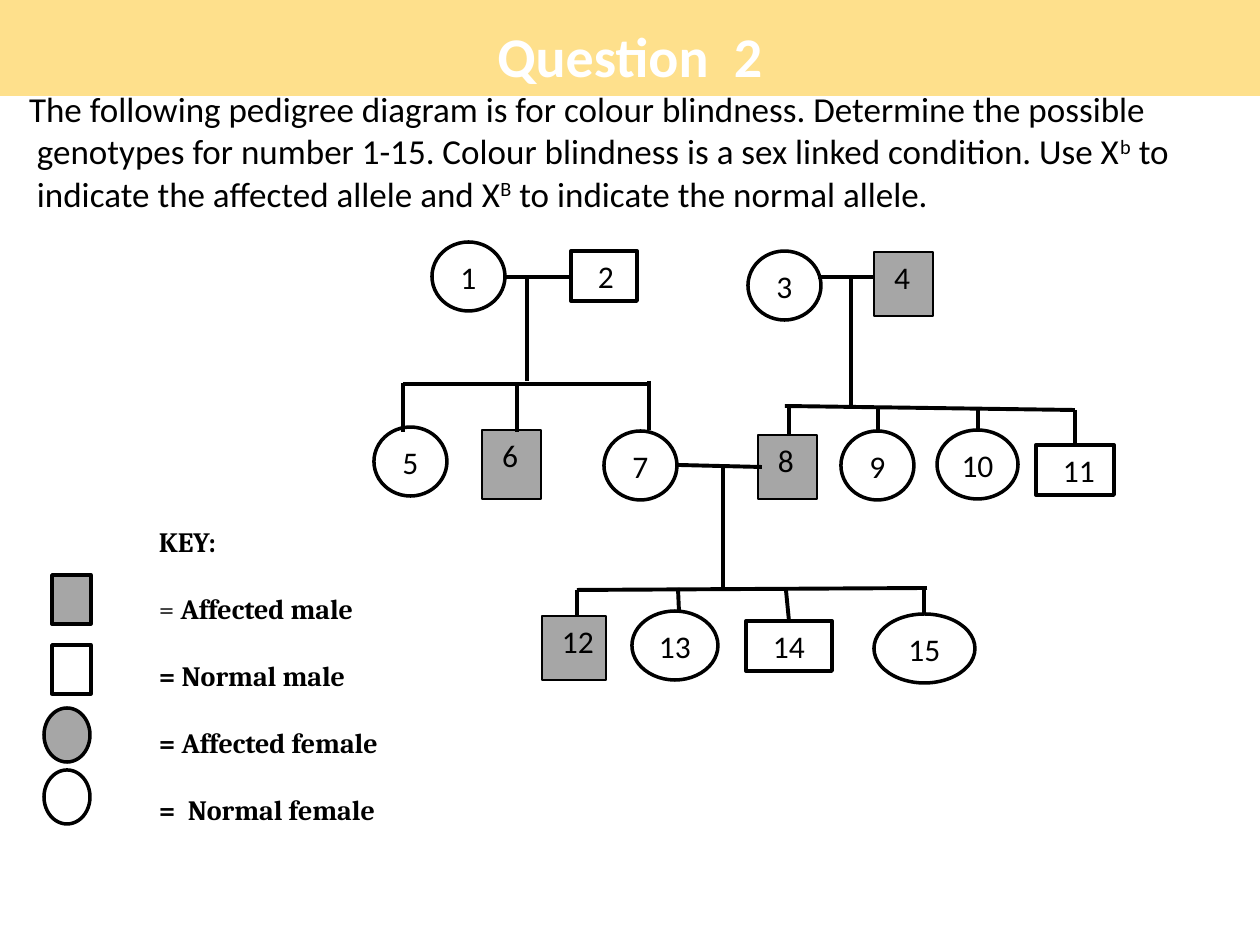
from typing import NamedTuple

from lxml import etree
from pptx import Presentation
from pptx import util as u
from pptx.dml.color import RGBColor
from pptx.enum import shapes, text
from pptx.oxml.ns import qn

PX = 914400 / 126
BLACK = RGBColor(0x00, 0x00, 0x00)
WHITE = RGBColor(0xFF, 0xFF, 0xFF)
GREY = RGBColor(0xA6, 0xA6, 0xA6)
YELLOW = RGBColor(0xFE, 0xE0, 0x8C)

RECT = shapes.MSO_SHAPE.RECTANGLE
OVAL = shapes.MSO_SHAPE.OVAL
NODE = shapes.MSO_SHAPE.FLOWCHART_CONNECTOR
MIDDLE, TOP = text.MSO_ANCHOR.MIDDLE, text.MSO_ANCHOR.TOP
LEFT, CENTER = text.PP_ALIGN.LEFT, text.PP_ALIGN.CENTER

TITLE = dict(name="Calibri", size=u.Pt(32), bold=True)
BODY = dict(name="Calibri", size=u.Pt(20))
LABEL = dict(name="Calibri", size=u.Pt(18))
KEY = dict(name="Cambria", size=u.Pt(16))


class Box(NamedTuple):
    x: int
    y: int
    w: int
    h: int


class Style(NamedTuple):
    kind: int
    fill: RGBColor | None
    line: float
    inset: int = 0


class Person(NamedTuple):
    label: str
    style: Style
    box: Box


class Line(NamedTuple):
    x1: int
    y1: int
    x2: int
    y2: int


FEMALE = Style(OVAL, None, 2)
MALE = Style(RECT, None, 2.25, 27)
AFFECTED_MALE = Style(RECT, GREY, 0.75, 20)

PEOPLE = [
    Person("1", FEMALE, Box(432, 242, 73, 69)),
    Person("2", MALE, Box(571, 251, 66, 50)),
    Person("3", FEMALE, Box(748, 251, 73, 69)),
    Person("4", AFFECTED_MALE, Box(874, 252, 59, 64)),
    Person("5", FEMALE, Box(374, 427, 73, 69)),
    Person("6", AFFECTED_MALE, Box(482, 430, 59, 69)),
    Person("7", FEMALE, Box(604, 431, 73, 69)),
    Person("8", AFFECTED_MALE, Box(758, 435, 59, 64)),
    Person("9", FEMALE, Box(841, 431, 73, 69)),
    Person("10", FEMALE, Box(937, 430, 81, 69)),
    Person("11", MALE, Box(1036, 445, 78, 50)),
    Person("12", AFFECTED_MALE, Box(542, 616, 64, 64)),
    Person("13", FEMALE, Box(632, 611, 86, 69)),
    Person("14", MALE, Box(746, 621, 86, 50)),
    Person("15", FEMALE, Box(874, 614, 101, 69)),
]

LINES = [
    Line(505, 277, 571, 277), Line(527, 277, 527, 381),
    Line(403, 384, 649, 384), Line(403, 383, 403, 432),
    Line(517, 383, 517, 432), Line(649, 381, 649, 430),
    Line(818, 277, 874, 277), Line(851, 277, 851, 406),
    Line(785, 406, 1075, 410), Line(789, 407, 789, 435),
    Line(878, 406, 878, 431), Line(978, 410, 978, 430),
    Line(1075, 410, 1075, 445),
    Line(678, 465, 762, 467), Line(723, 467, 723, 590),
    Line(577, 590, 927, 588), Line(577, 590, 577, 616),
    Line(678, 588, 679, 611), Line(786, 590, 789, 621),
    Line(924, 588, 924, 614),
]

KEY_SYMBOLS = [
    (Style(RECT, GREY, 2), Box(52, 575, 39, 49)),
    (Style(RECT, WHITE, 2), Box(52, 645, 39, 49)),
    (Style(NODE, GREY, 2), Box(44, 708, 46, 54)),
    (Style(NODE, WHITE, 2), Box(44, 770, 46, 54)),
]

KEY_ROWS = [
    [("KEY:", True)],
    [("= ", False), ("Affected male", True)],
    [("= Normal male", True)],
    [("= Affected female", True)],
    [("=  Normal female", True)],
]

QUESTION = [
    [("The following pedigree diagram is for colour blindness. Determine the possible", 0)],
    [(" genotypes for number 1-15. Colour blindness is a sex linked condition. Use X", 0),
     ("b", 30), (" to", 0)],
    [(" indicate the affected allele and X", 0), ("B", 30),
     (" to indicate the normal allele.", 0)],
]


def emu(px: int) -> int:
    return round(px * PX)


def set_all(obj, values: dict) -> None:
    for name, value in values.items():
        setattr(obj, name, value)


def add_run(p, words: str, fmt: dict, color: RGBColor = BLACK):
    r = p.add_run()
    r.text = words
    set_all(r.font, fmt)
    r.font.color.rgb = color
    return r


def add_paragraph(tf, index: int, align=LEFT):
    p = tf.add_paragraph() if index else tf.paragraphs[0]
    p.alignment = align
    return p


def set_frame(tf, anchor, left: int = 13, top: int = 6, right: int = 13) -> None:
    set_all(tf, dict(word_wrap=True, vertical_anchor=anchor,
                     margin_left=emu(left), margin_top=emu(top),
                     margin_right=emu(right), margin_bottom=emu(6)))


def draw_shape(s, style: Style, box: Box):
    sp = s.shapes.add_shape(style.kind, *map(emu, box))
    sp.shadow.inherit = False
    if style.fill is None:
        sp.fill.background()
    else:
        sp.fill.solid()
        sp.fill.fore_color.rgb = style.fill
    if style.line:
        sp.line.color.rgb = BLACK
        sp.line.width = u.Pt(style.line)
    else:
        sp.line.fill.background()
    return sp


def draw_person(s, person: Person) -> None:
    tf = draw_shape(s, person.style, person.box).text_frame
    is_oval = person.style.kind == OVAL
    set_frame(tf, MIDDLE if is_oval else TOP, left=person.style.inset, right=0)
    p = add_paragraph(tf, 0, CENTER if is_oval else LEFT)
    add_run(p, person.label, LABEL)


def draw_line(s, line: Line) -> None:
    cn = s.shapes.add_connector(shapes.MSO_CONNECTOR.STRAIGHT, *map(emu, line))
    cn.line.color.rgb = BLACK
    cn.line.width = u.Pt(2.25)
    etree.SubElement(cn._element.spPr, qn("a:effectLst"))


def draw_key(s) -> None:
    for style, box in KEY_SYMBOLS:
        draw_shape(s, style, box)
    tf = draw_shape(s, Style(RECT, WHITE, 0), Box(146, 519, 301, 305)).text_frame
    set_frame(tf, TOP)
    for i, row in enumerate(KEY_ROWS):
        p = add_paragraph(tf, i)
        p.space_before = u.Pt(19 if i else 0)
        for words, bold in row:
            add_run(p, words, KEY | dict(bold=bold))


def draw_question(s) -> None:
    tf = s.shapes.add_textbox(*map(emu, Box(16, 81, 1229, 140))).text_frame
    set_frame(tf, MIDDLE)
    for i, row in enumerate(QUESTION):
        p = add_paragraph(tf, i)
        for words, raised in row:
            r = add_run(p, words, BODY)
            if raised:
                r.font._element.set("baseline", str(raised * 1000))


def draw_title(s) -> None:
    tf = draw_shape(s, Style(RECT, YELLOW, 0), Box(0, -10, 1260, 106)).text_frame
    set_frame(tf, MIDDLE, top=30)
    add_run(add_paragraph(tf, 0, CENTER), "Question  2", TITLE, WHITE)


def main() -> None:
    prs = Presentation()
    prs.slide_width, prs.slide_height = emu(1260), emu(945)
    s = prs.slides.add_slide(prs.slide_layouts[6])
    draw_key(s)
    draw_question(s)
    draw_title(s)
    for person in PEOPLE:
        draw_person(s, person)
    for line in LINES:
        draw_line(s, line)
    prs.save("out.pptx")


if __name__ == "__main__":
    main()
